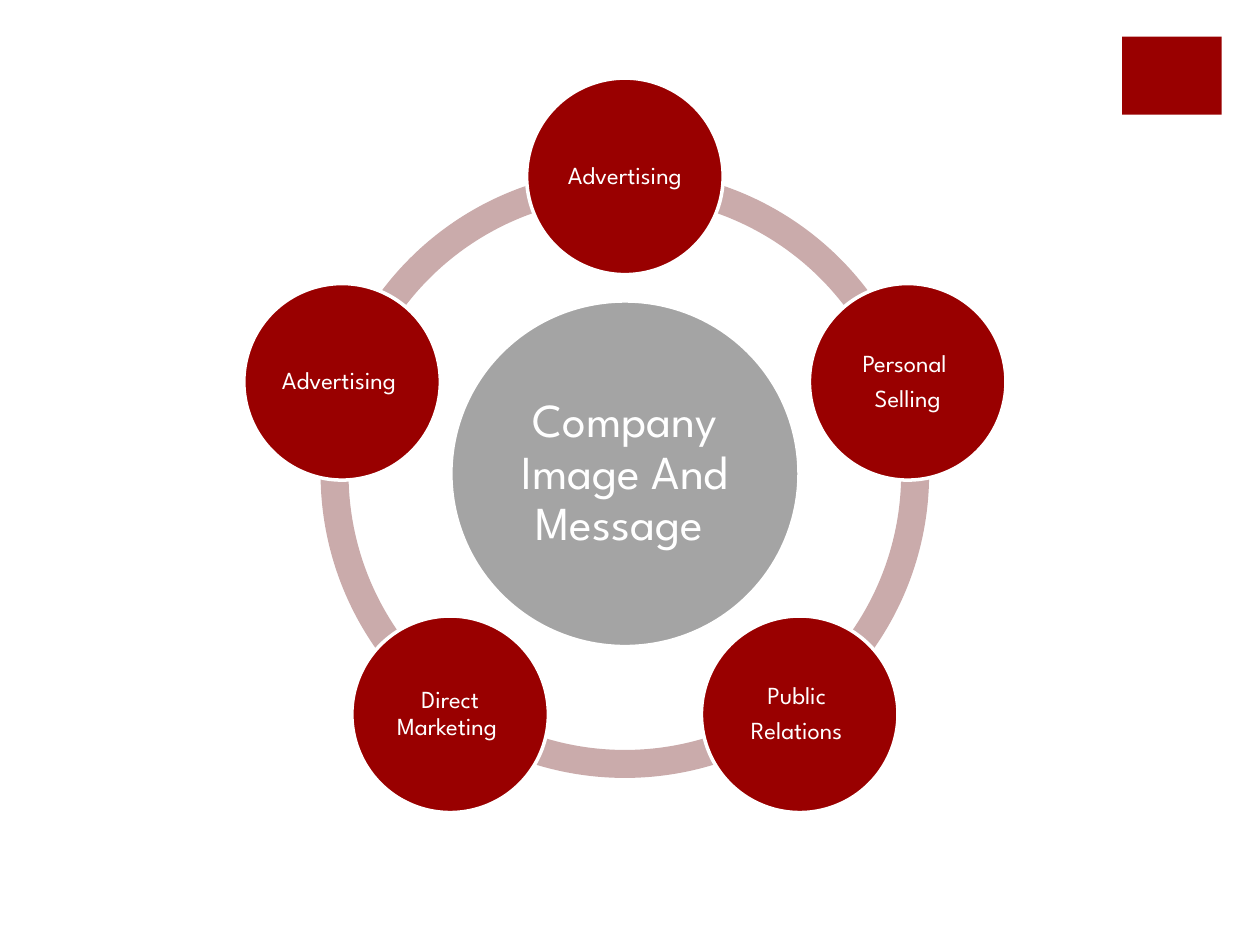
import math

import pptx
import pptx.dml.color
import pptx.enum.shapes
import pptx.enum.text
import pptx.util

Inches, Pt = pptx.util.Inches, pptx.util.Pt
SHAPE = pptx.enum.shapes.MSO_SHAPE
RED, PINK, GREY, WHITE = "990000", "CAABAB", "A4A4A4", "FFFFFF"


def rgb(color):
    return pptx.dml.color.RGBColor.from_string(color)


def add_shape(kind, cx, cy, w, h, fill, line_width=0, lines=(), size=14, inset=0.02):
    """Add a shape centred on (cx, cy), in inches, with one paragraph per line."""
    sp = slide.shapes.add_shape(
        kind, Inches(cx - w / 2), Inches(cy - h / 2), Inches(w), Inches(h))
    sp.shadow.inherit = False
    sp.fill.solid()
    sp.fill.fore_color.rgb = rgb(fill)
    if line_width:
        sp.line.color.rgb = rgb(WHITE)
        sp.line.width = Pt(line_width)
    else:
        sp.line.fill.background()
    tf = sp.text_frame
    tf.word_wrap = True
    tf.vertical_anchor = pptx.enum.text.MSO_ANCHOR.MIDDLE
    tf.margin_left = tf.margin_right = tf.margin_top = tf.margin_bottom = Inches(inset)
    for i, line in enumerate(lines):
        p = tf.add_paragraph() if i else tf.paragraphs[0]
        p.text = line
        p.alignment = pptx.enum.text.PP_ALIGN.CENTER
        p.line_spacing = 0.9
        p.space_after = Pt(round(size * 0.35))
        p.font.name = "League Spartan"
        p.font.size = Pt(size)
        p.font.color.rgb = rgb(WHITE)
    return sp


prs = pptx.Presentation()
prs.slide_width, prs.slide_height = Inches(10), Inches(7.5)
slide = prs.slides.add_slide(prs.slide_layouts[6])

add_shape(SHAPE.RECTANGLE, 9.3, 0.6, 0.79, 0.62, RED)

CX, CY, RADIUS = 4.96, 3.76, 2.36
topics = [
    ["Advertising"],
    ["Personal ", "Selling"],
    ["Public ", "Relations "],
    ["Direct Marketing "],
    ["Advertising "],
]
step = 360 / len(topics)
angles = [(270 + i * step) % 360 for i in range(len(topics))]  # clockwise from the right

for start in reversed(angles):
    arc = add_shape(SHAPE.BLOCK_ARC, CX, CY, 4.83, 4.83, PINK)
    # An angle of 1 degree is 60000 units, and an adjustment of 1 is 100000
    arc.adjustments[0] = start * 0.6
    arc.adjustments[1] = (start + step) % 360 * 0.6
    arc.adjustments[2] = 0.046

add_shape(SHAPE.OVAL, CX, CY, 2.77, 2.75, GREY, 2.5,
          ["Company Image And Message "], size=27, inset=0.04)

for angle, lines in zip(angles, topics):
    a = math.radians(angle)
    add_shape(SHAPE.OVAL, CX + RADIUS * math.cos(a), CY + RADIUS * math.sin(a),
              1.56, 1.56, RED, 2, lines)

prs.save("out.pptx")
